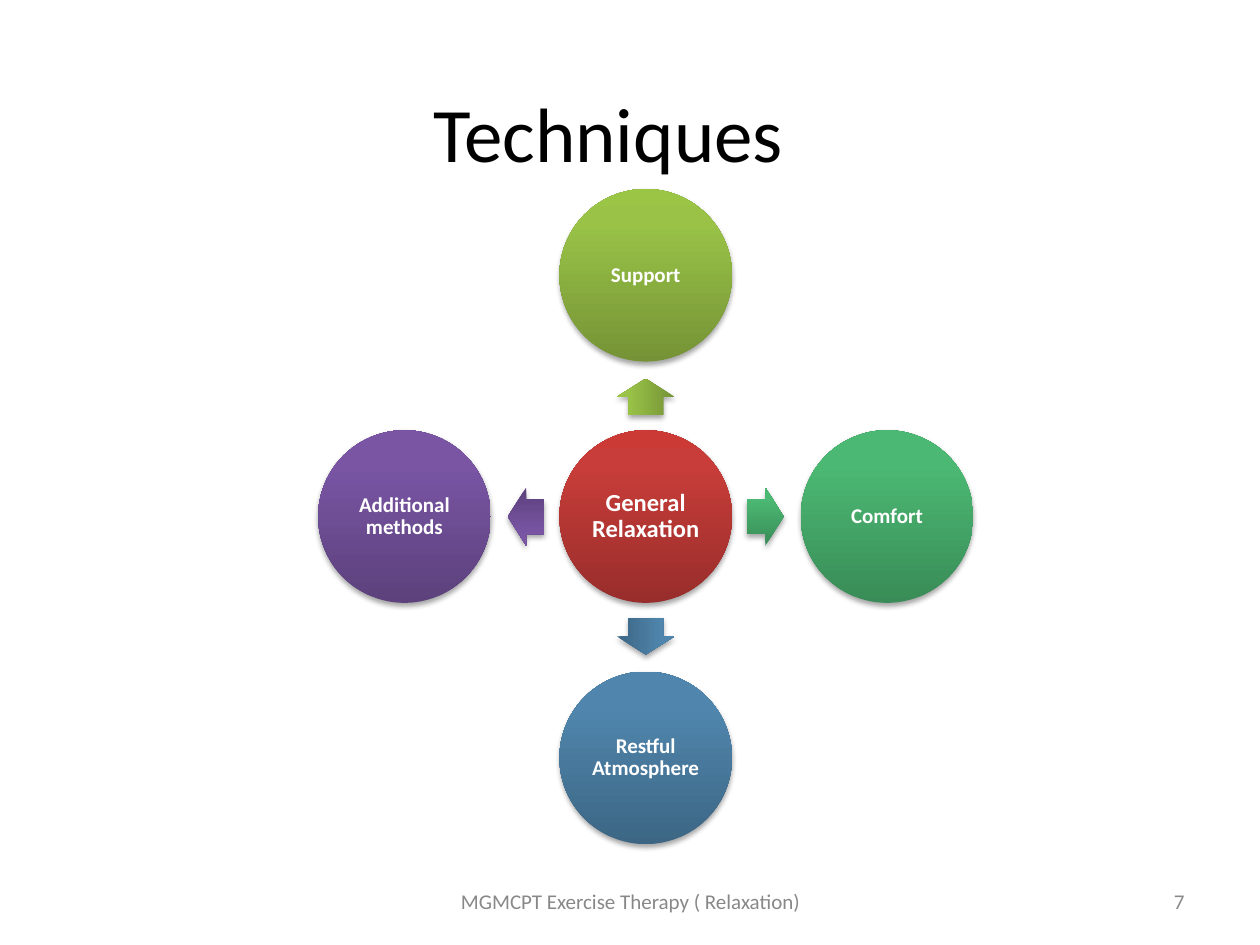
from pptx import Presentation
from pptx import util as u
from pptx.dml import color
from pptx.enum import shapes, text
from pptx.oxml import parse_xml
from pptx.oxml.ns import nsdecls, qn

COLUMNS, ROWS = 100, 75
COLORS = {
    "title": "000000",
    "label": "FFFFFF",
    "footer": "888888",
    "shadow": "000000",
    "red": ("982D2B", "C83D39", "CC3A36"),
    "lime": ("759336", "99C247", "9BC545"),
    "green": ("398C57", "4BB873", "49BB72"),
    "blue": ("3C6684", "5086AD", "4F88B0"),
    "purple": ("5C417C", "7955A4", "7955A6"),
}


def write(frame, words, size=12, ink="label", bold=False, align="CENTER",
          spacing=None, insets=(0.1, 0.05)):
    frame.word_wrap = True
    frame.vertical_anchor = text.MSO_ANCHOR.MIDDLE
    frame.margin_left = frame.margin_right = u.Inches(insets[0])
    frame.margin_top = frame.margin_bottom = u.Inches(insets[1])
    paragraph = frame.paragraphs[0]
    paragraph.alignment = getattr(text.PP_ALIGN, align)
    paragraph.line_spacing = spacing
    run = paragraph.add_run()
    run.text = words
    run.font.name = "Calibri"
    run.font.size = u.Pt(size)
    run.font.bold = bold
    run.font.color.rgb = color.RGBColor.from_string(COLORS[ink])


class Board:
    def __init__(self, deck):
        self.slide = deck.slides.add_slide(deck.slide_layouts[6])
        self.column = deck.slide_width / COLUMNS
        self.row = deck.slide_height / ROWS

    def box(self, left, top, width, height):
        return [u.Emu(round(n * unit) ) for n, unit in (
            (left, self.column), (top, self.row),
            (width, self.column), (height, self.row))]

    def label(self, words, left, top, width, height, **style):
        holder = self.slide.shapes.add_textbox(*self.box(left, top, width, height))
        write(holder.text_frame, words, **style)

    def glossy(self, kind, center, width, height, hue):
        x, y = center
        shape = self.slide.shapes.add_shape(
            kind, *self.box(x - width / 2, y - height / 2, width, height))
        shape.line.fill.background()
        shape.fill.gradient()
        shape.fill.gradient_angle = 90
        properties = shape._element.spPr
        stops = properties.find(f".//{qn('a:gsLst')}")
        for stop in list(stops):
            stops.remove(stop)
        for position, tone in zip((0, 80000, 100000), COLORS[hue]):
            stops.append(parse_xml(
                f'<a:gs {nsdecls("a")} pos="{position}"><a:srgbClr val="{tone}"/></a:gs>'))
        shape.shadow.inherit = False
        properties.find(qn("a:effectLst")).append(parse_xml(
            f'<a:outerShdw {nsdecls("a")} blurRad="{u.Pt(3.1)}" dist="{u.Pt(1.8)}" '
            f'dir="5400000" rotWithShape="0"><a:srgbClr val="{COLORS["shadow"]}">'
            '<a:alpha val="35000"/></a:srgbClr></a:outerShdw>'))
        return shape

    def circle(self, words, center, hue, size=12):
        disc = self.glossy(shapes.MSO_SHAPE.OVAL, center, 13.7, 13.7, hue)
        write(disc.text_frame, words, size=size, bold=True, spacing=0.9,
              insets=(0.02, 0.02))

    def arrow(self, center, hue, rotation):
        pointer = self.glossy(shapes.MSO_SHAPE.RIGHT_ARROW, center, 2.9, 4.6, hue)
        pointer.adjustments[0] = 0.6
        pointer.adjustments[1] = 0.5
        pointer.rotation = rotation


def main():
    deck = Presentation()
    deck.slide_width, deck.slide_height = u.Inches(10), u.Inches(7.5)
    board = Board(deck)
    board.label("Techniques", 3.3, 4.2, 90, 12.5, size=44, ink="title")

    hub_x, hub_y = 51.25, 41
    arrow_reach, circle_reach = 9.5, 19.15
    board.circle("General Relaxation", (hub_x, hub_y), "red", size=14)
    techniques = [
        ("Support", "lime", 0, -1, 270),
        ("Comfort", "green", 1, 0, 0),
        ("Restful Atmosphere", "blue", 0, 1, 90),
        ("Additional methods", "purple", -1, 0, 180),
    ]
    for words, hue, dx, dy, rotation in techniques:
        board.arrow((hub_x + dx * arrow_reach, hub_y + dy * arrow_reach), hue, rotation)
        board.circle(words, (hub_x + dx * circle_reach, hub_y + dy * circle_reach), hue)

    board.label("MGMCPT Exercise Therapy ( Relaxation)", 34.2, 69.5, 31.7, 4,
                ink="footer")
    board.label("7", 71.7, 69.5, 23.3, 4, ink="footer", align="RIGHT")
    deck.save("out.pptx")


if __name__ == "__main__":
    main()
